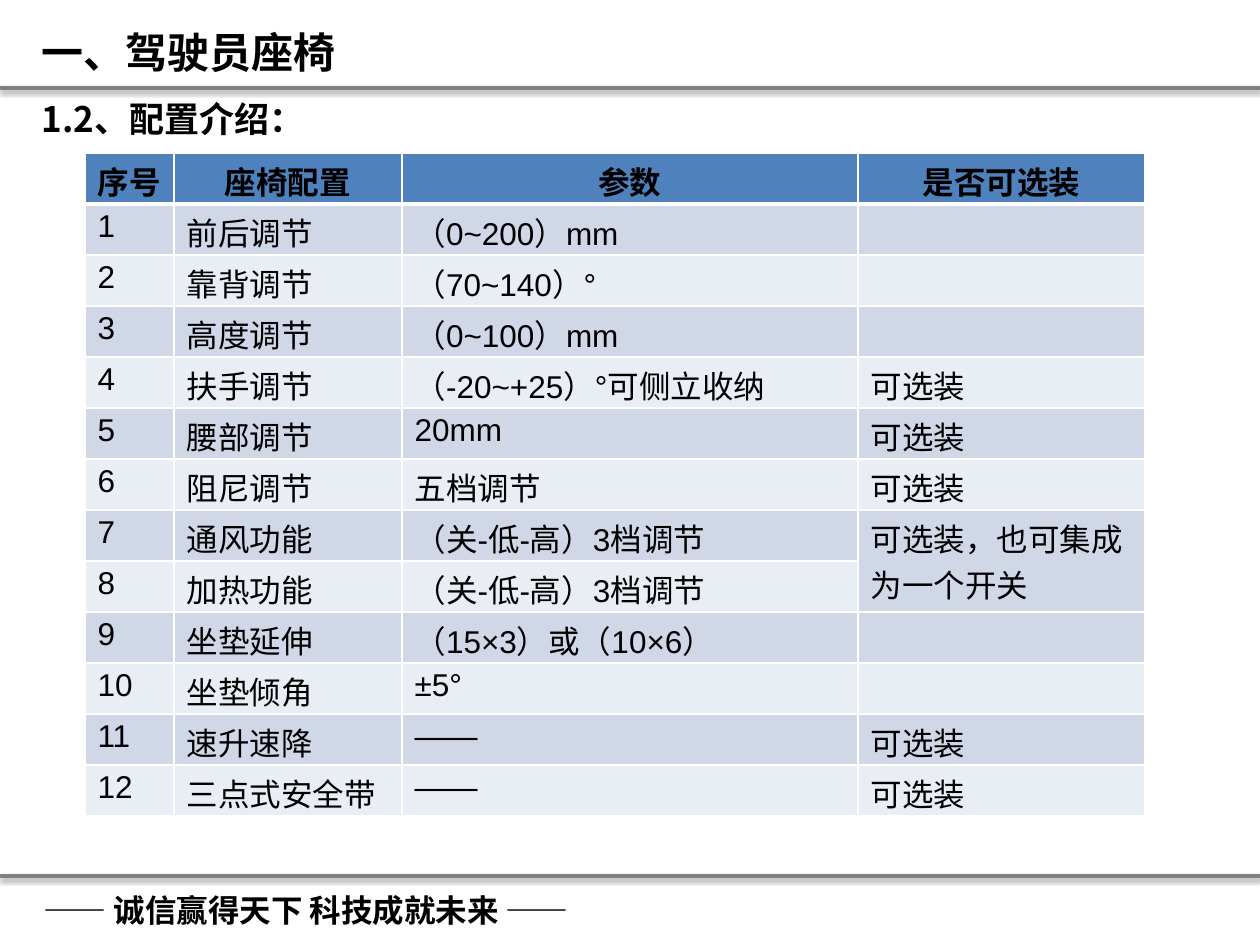
from dataclasses import dataclass
from typing import NamedTuple

from lxml.etree import SubElement
from pptx import Presentation
from pptx.dml.color import RGBColor
from pptx.enum.shapes import MSO_CONNECTOR
from pptx.enum.text import MSO_ANCHOR, MSO_AUTO_SIZE, PP_ALIGN
from pptx.oxml.ns import qn
from pptx.oxml import parse_xml
from pptx.oxml.ns import nsdecls
from pptx.util import Pt

PX = 914400 / 126


def px(count: int) -> int:
    return round(count * PX)


@dataclass(frozen=True)
class Theme:
    ink: str = "000000"
    rule: str = "808080"
    grid: str = "FFFFFF"
    head: str = "4F81BD"
    bands: tuple[str, str] = ("D0D8E8", "E9EDF4")
    latin: str = "Arial"
    asian: str = "Noto Sans CJK SC"
    title: int = 24
    lead: int = 20
    text: int = 18


class Box(NamedTuple):
    left: int
    top: int
    width: int
    height: int


class Row(NamedTuple):
    name: str
    range: str
    option: str = ""


THEME = Theme()
WIDTH, HEIGHT = 1260, 945
TITLE = Box(29, 20, 794, 63)
LEAD = Box(29, 91, 1147, 55)
MOTTO = Box(31, 885, 668, 50)
RULES = (88, 876)
GRID_AT = (85, 153)
COLS = (89, 228, 456, 287)
ROW_H = 51
PAD_TOP = 5
HEADS = ("序号", "座椅配置", "参数", "是否可选装")
OPTION = "可选装"
ROWS = (
    Row("前后调节", "（0~200）mm"),
    Row("靠背调节", "（70~140）°"),
    Row("高度调节", "（0~100）mm"),
    Row("扶手调节", "（-20~+25）°可侧立收纳", OPTION),
    Row("腰部调节", "20mm", OPTION),
    Row("阻尼调节", "五档调节", OPTION),
    Row("通风功能", "（关-低-高）3档调节", "可选装，也可集成为一个开关"),
    Row("加热功能", "（关-低-高）3档调节"),
    Row("坐垫延伸", "（15×3）或（10×6）"),
    Row("坐垫倾角", "±5°"),
    Row("速升速降", "——", OPTION),
    Row("三点式安全带", "——", OPTION),
)
SHARED = (7, 8)


def style(frame, size: int, bold: bool, latin: str, align=PP_ALIGN.LEFT) -> None:
    for para in frame.paragraphs:
        para.alignment = align
        for run in para.runs:
            font = run.font
            font.size, font.bold, font.name = Pt(size), bold, latin
            font.color.rgb = RGBColor.from_string(THEME.ink)
            asian = SubElement(run._r.get_or_add_rPr(), qn("a:ea"))
            asian.set("typeface", THEME.asian)


def write(shape, box: Box, text: str, size: int, latin: str) -> None:
    """Place a shape and fill it with one bold line of text."""
    shape.left, shape.top, shape.width, shape.height = map(px, box)
    frame = shape.text_frame
    frame.text = text
    frame.word_wrap = True
    frame.auto_size = MSO_AUTO_SIZE.NONE
    frame.vertical_anchor = MSO_ANCHOR.MIDDLE
    first = frame.paragraphs[0]
    props = first._p.get_or_add_pPr()
    props.set("marL", "0")
    props.set("indent", "0")
    SubElement(props, qn("a:buNone"))
    first.space_before = Pt(0)
    style(frame, size, True, latin)


def draw_rule(slide, y: int) -> None:
    rule = slide.shapes.add_connector(
        MSO_CONNECTOR.STRAIGHT, 0, px(y), px(WIDTH), px(y))
    rule.line.width = Pt(2)
    rule.line.color.rgb = RGBColor.from_string(THEME.rule)
    rule._element.spPr.append(parse_xml(
        f'<a:effectLst {nsdecls("a")}>'
        f'<a:outerShdw blurRad="{Pt(3.1)}" dist="{Pt(1.6)}" dir="5400000" rotWithShape="0">'
        f'<a:srgbClr val="{THEME.ink}"><a:alpha val="38000"/></a:srgbClr>'
        '</a:outerShdw></a:effectLst>'))


def edge(cell, side: str, width: int) -> None:
    line = SubElement(cell._tc.get_or_add_tcPr(), qn(f"a:ln{side}"), w=str(Pt(width)))
    fill = SubElement(line, qn("a:solidFill"))
    SubElement(fill, qn("a:srgbClr"), val=THEME.grid)


def paint(cell, row: int, col: int, text: str) -> None:
    """Fill one cell; the border under the header row is thicker."""
    head = row == 0
    cell.text_frame.text = text
    cell.margin_top, cell.margin_bottom = px(PAD_TOP), 0
    centre = PP_ALIGN.CENTER if head else PP_ALIGN.LEFT
    style(cell.text_frame, THEME.text, head, THEME.latin, centre)
    sides = {"L": 1, "R": 1, "T": 3 if row == 1 else 1, "B": 3 if head else 1}
    for side, width in sides.items():
        edge(cell, side, width)
    cell.fill.solid()
    shade = THEME.head if head else THEME.bands[(row - 1) % 2]
    cell.fill.fore_color.rgb = RGBColor.from_string(shade)


def draw_grid(slide) -> None:
    lines = [HEADS] + [(str(num), *row) for num, row in enumerate(ROWS, 1)]
    left, top = GRID_AT
    size = (left, top, sum(COLS), ROW_H * len(lines))
    table = slide.shapes.add_table(len(lines), len(COLS), *map(px, size)).table
    for col, width in zip(table.columns, COLS):
        col.width = px(width)
    for row, line in enumerate(lines):
        table.rows[row].height = px(ROW_H)
        for col, text in enumerate(line):
            paint(table.cell(row, col), row, col, text)
    start, end = SHARED
    last = len(COLS) - 1
    table.cell(start, last).merge(table.cell(end, last))


def main() -> None:
    deck = Presentation()
    deck.slide_width, deck.slide_height = px(WIDTH), px(HEIGHT)
    slide = deck.slides.add_slide(deck.slide_layouts[1])
    for y in RULES:
        draw_rule(slide, y)
    title, lead = slide.placeholders
    write(title, TITLE, "一、驾驶员座椅", THEME.title, THEME.asian)
    write(lead, LEAD, "1.2、配置介绍：", THEME.lead, THEME.asian)
    motto = slide.shapes.add_textbox(*map(px, MOTTO))
    write(motto, MOTTO, "—— 诚信赢得天下 科技成就未来 ——", THEME.text, THEME.latin)
    draw_grid(slide)
    deck.save("out.pptx")


if __name__ == "__main__":
    main()
